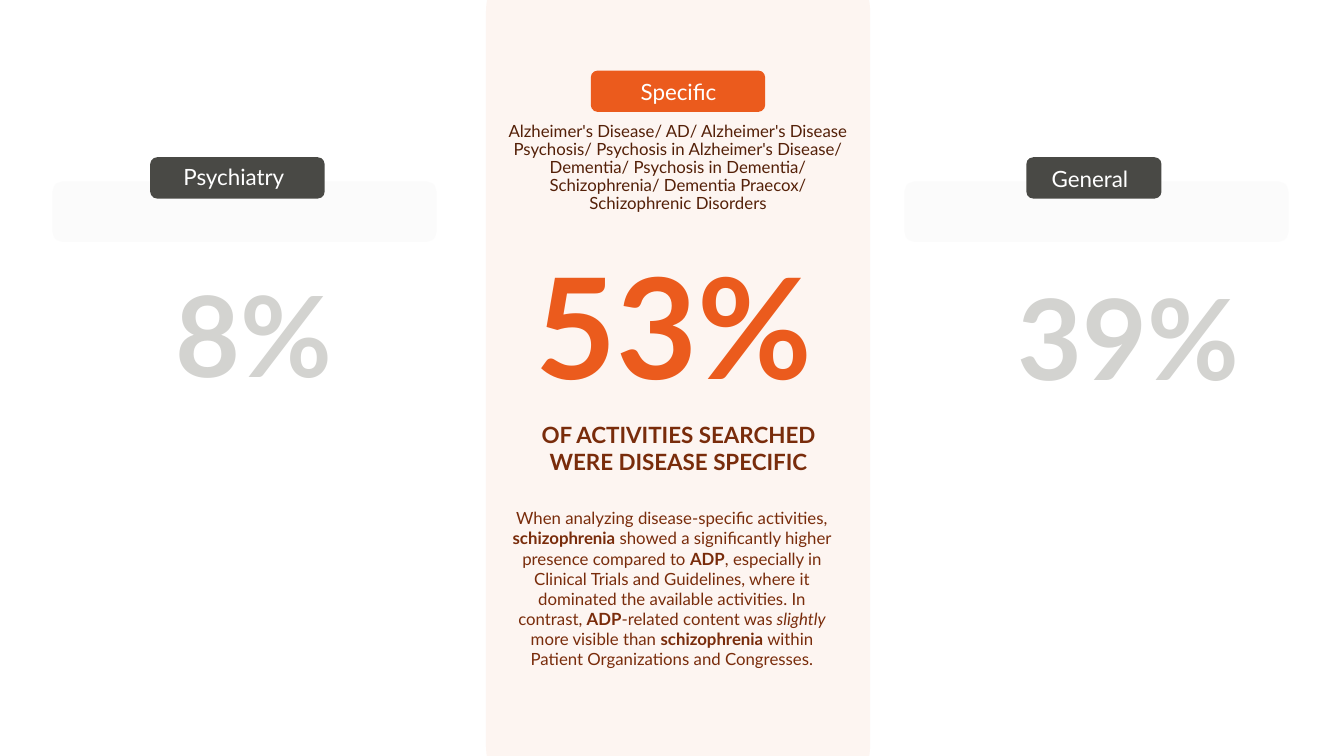
import dataclasses

import lxml.etree
import pptx
import pptx.dml.color
import pptx.enum.shapes
import pptx.enum.text
import pptx.oxml.ns
import pptx.slide
import pptx.text.text
import pptx.util

FONT = "Lato"
ORANGE = "EB5B1D"
BROWN = "792C0B"
DARK = "494945"
GREY = "D3D3D0"
PALE = "F2F2F2"
WHITE = "FFFFFF"
CENTER = pptx.enum.text.PP_ALIGN.CENTER
LEFT = pptx.enum.text.PP_ALIGN.LEFT


@dataclasses.dataclass
class Box:
    left: float
    top: float
    width: float
    height: float

    def sides(self) -> list[pptx.util.Length]:
        return [pptx.util.Inches(side) for side in dataclasses.astuple(self)]


@dataclasses.dataclass
class Panel:
    box: Box
    fill: str
    alpha: int = 100


@dataclasses.dataclass
class Run:
    text: str
    bold: bool = False
    slant: bool = False


@dataclasses.dataclass
class Label:
    box: Box
    runs: list[Run]
    size: int
    color: str
    align: pptx.enum.text.PP_ALIGN = CENTER
    space: float = 1.0


def paint(target: object, color: str) -> None:
    target.rgb = pptx.dml.color.RGBColor.from_string(color)


def draw_panel(slide: pptx.slide.Slide, panel: Panel) -> None:
    kind = pptx.enum.shapes.MSO_SHAPE.FLOWCHART_ALTERNATE_PROCESS
    shape = slide.shapes.add_shape(kind, *panel.box.sides())
    shape.shadow.inherit = False
    shape.line.fill.background()
    shape.fill.solid()
    paint(shape.fill.fore_color, panel.fill)
    if panel.alpha < 100:
        tag = pptx.oxml.ns.qn("a:srgbClr")
        color = next(shape.element.spPr.iter(tag))
        alpha = lxml.etree.SubElement(color, pptx.oxml.ns.qn("a:alpha"))
        alpha.set("val", str(panel.alpha * 1000))


def fill_text(frame: pptx.text.text.TextFrame, label: Label) -> None:
    frame.word_wrap = True
    frame.auto_size = pptx.enum.text.MSO_AUTO_SIZE.NONE
    frame.vertical_anchor = pptx.enum.text.MSO_ANCHOR.TOP
    para = frame.paragraphs[0]
    para.alignment = label.align
    para.line_spacing = label.space
    for part in label.runs:
        run = para.add_run()
        run.text = part.text
        run.font.name = FONT
        run.font.size = pptx.util.Pt(label.size)
        run.font.bold = part.bold
        run.font.italic = part.slant
        paint(run.font.color, label.color)


def draw_label(slide: pptx.slide.Slide, label: Label) -> None:
    fill_text(slide.shapes.add_textbox(*label.box.sides()).text_frame, label)


def draw_title(slide: pptx.slide.Slide, label: Label) -> None:
    title = slide.shapes.title
    title.left, title.top, title.width, title.height = label.box.sides()
    fill_text(title.text_frame, label)
    title.element.getparent().append(title.element)


PANELS = [
    Panel(Box(4.82, -0.52, 3.81, 8.55), "FBDED2", 30),
    Panel(Box(0.52, 1.8, 3.81, 0.6), PALE, 25),
    Panel(Box(8.97, 1.8, 3.81, 0.6), PALE, 25),
    Panel(Box(1.49, 1.56, 1.73, 0.41), DARK),
    Panel(Box(5.86, 0.7, 1.73, 0.41), ORANGE),
    Panel(Box(10.18, 1.56, 1.34, 0.41), DARK),
]

TITLE = Label(
    Box(4.99, 4.13, 3.48, 0.64),
    [Run("OF ACTIVITIES SEARCHED WERE DISEASE SPECIFIC", bold=True)],
    16,
    BROWN,
)

TERMS = (
    "Alzheimer's Disease/ AD/ Alzheimer's Disease Psychosis/ "
    "Psychosis in Alzheimer's Disease/ Dementia/ Psychosis in Dementia/ "
    "Schizophrenia/ Dementia Praecox/ Schizophrenic Disorders"
)

STORY = [
    Run("When analyzing disease-specific activities, "),
    Run("schizophrenia", bold=True),
    Run(" showed a significantly higher presence compared to "),
    Run("ADP", bold=True),
    Run(
        ", especially in Clinical Trials and Guidelines, where it dominated "
        "the available activities. In contrast, "
    ),
    Run("ADP", bold=True),
    Run("-related content was"),
    Run(" slightly", slant=True),
    Run(" more visible than "),
    Run("schizophrenia", bold=True),
    Run(" within Patient Organizations and Congresses."),
]

LABELS = [
    Label(Box(1.44, 1.57, 1.81, 0.37), [Run("Psychiatry ")], 16, WHITE),
    Label(Box(5.98, 0.73, 1.5, 0.37), [Run("Specific")], 16, WHITE),
    Label(Box(10.11, 1.59, 1.46, 0.37), [Run("General ")], 16, WHITE),
    Label(Box(1, 2.58, 3.04, 1.45), [Run("8%", bold=True)], 80, GREY),
    Label(Box(5.21, 2.33, 3.04, 1.78), [Run("53%", bold=True)], 100, ORANGE, LEFT),
    Label(Box(9.67, 2.61, 3.04, 1.45), [Run("39%", bold=True)], 80, GREY),
    Label(Box(4.87, 1.17, 3.71, 1.02), [Run(TERMS)], 12, "542008", space=0.9),
    Label(Box(4.97, 4.99, 3.39, 1.72), STORY, 12, BROWN),
]


def main() -> None:
    deck = pptx.Presentation()
    deck.slide_width = pptx.util.Inches(13.33)
    deck.slide_height = pptx.util.Inches(7.5)
    slide = deck.slides.add_slide(deck.slide_layouts.get_by_name("Title Only"))
    for panel in PANELS:
        draw_panel(slide, panel)
    draw_title(slide, TITLE)
    for label in LABELS:
        draw_label(slide, label)
    deck.save("out.pptx")


if __name__ == "__main__":
    main()
